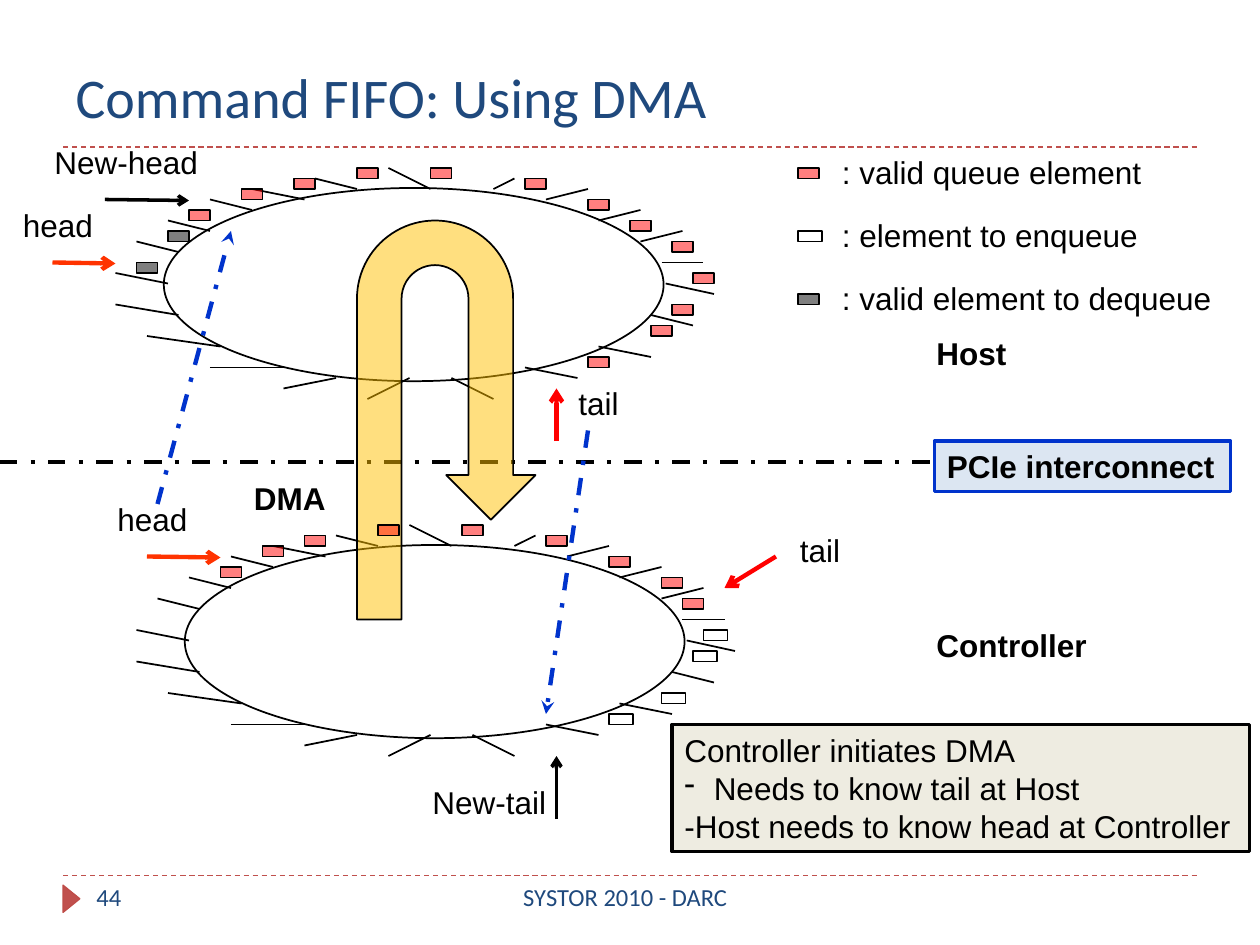
"""Build the slide on a command FIFO that is moved by DMA."""
from lxml import etree
from pptx import Presentation
from pptx.dml.color import RGBColor
from pptx.enum.dml import MSO_LINE
from pptx.enum.shapes import MSO_CONNECTOR, MSO_SHAPE
from pptx.enum.text import MSO_ANCHOR, PP_ALIGN
from pptx.oxml.ns import qn
from pptx.util import Pt

PX = 7620
STRAIGHT = MSO_CONNECTOR.STRAIGHT
RECTANGLE, OVAL = MSO_SHAPE.RECTANGLE, MSO_SHAPE.OVAL
TRIANGLE, U_TURN = MSO_SHAPE.ISOSCELES_TRIANGLE, MSO_SHAPE.U_TURN_ARROW
DASH, DASH_DOT = MSO_LINE.DASH, MSO_LINE.DASH_DOT
LEFT, CENTER = PP_ALIGN.LEFT, PP_ALIGN.CENTER
TOP, MIDDLE, BOTTOM = MSO_ANCHOR.TOP, MSO_ANCHOR.MIDDLE, MSO_ANCHOR.BOTTOM
color = RGBColor.from_string
BLACK, WHITE, RED, ORANGE = "000000", "FFFFFF", "FF0000", "FF3300"
BLUE, NAVY, BRICK = "0033CC", "1F497D", "C0504D"

presentation = Presentation()
presentation.slide_width, presentation.slide_height = 1200 * PX, 900 * PX
slide = presentation.slides.add_slide(presentation.slide_layouts[5])


def draw_line(ends, hue, width, dash=None, head=None):
    connector = slide.shapes.add_connector(STRAIGHT, *[value * PX for value in ends])
    connector.line.color.rgb = color(hue)
    connector.line.width = Pt(width)
    if dash:
        connector.line.dash_style = dash
    if head:
        etree.SubElement(connector.line._get_or_add_ln(), qn("a:tailEnd"), type=head)
    etree.SubElement(connector._element.spPr, qn("a:effectLst"))


def draw_shape(kind, frame, fill=None, alpha=100, outline=BLACK, width=1):
    shape = slide.shapes.add_shape(kind, *[value * PX for value in frame])
    shape.shadow.inherit = False
    if fill:
        shape.fill.solid()
        shape.fill.fore_color.rgb = color(fill)
        if alpha < 100:
            hue = shape._element.spPr.find(".//" + qn("a:srgbClr"))
            etree.SubElement(hue, qn("a:alpha"), val=str(alpha * 1000))
    else:
        shape.fill.background()
    shape.line.color.rgb = color(outline)
    shape.line.width = Pt(width)
    return shape


for y in (834, 140):
    draw_line((60, y, 1140, y), BRICK, 0.75, DASH)
footer_marker = draw_shape(TRIANGLE, (55, 848, 26, 16), BRICK, outline="BF4C48", width=0.75)
footer_marker.rotation = 90

title = slide.shapes.title
title.left, title.top, title.width, title.height = 60 * PX, 30 * PX, 1080 * PX, 100 * PX
title.text_frame.vertical_anchor = BOTTOM
paragraph = title.text_frame.paragraphs[0]
paragraph.alignment = LEFT
run = paragraph.add_run()
run.text = "Command FIFO: Using DMA"
run.font.name, run.font.size = "Calibri", Pt(32)
run.font.color.rgb = color(NAVY)

slot_marks = [
    (160, 210, 200, 220), (130, 230, 170, 240), (110, 260, 160, 270), (110, 290, 170, 300),
    (140, 320, 210, 330), (200, 350, 270, 350), (200, 190, 240, 200), (240, 180, 290, 190),
    (270, 370, 320, 360), (390, 360, 350, 380), (300, 170, 340, 180), (430, 360, 470, 380),
    (500, 350, 550, 360), (370, 160, 410, 180), (470, 180, 490, 170), (520, 190, 560, 180),
    (570, 210, 610, 200), (610, 230, 650, 220), (630, 250, 670, 250), (634, 270, 680, 280),
    (570, 330, 620, 340), (620, 300, 660, 310),
]
for dx, dy in ((0, 0), (20, 340)):
    draw_shape(OVAL, (156 + dx, 179 + dy, 476, 184))
    for x1, y1, x2, y2 in slot_marks:
        draw_line((x1 + dx, y1 + dy, x2 + dx, y2 + dy), BLACK, 1)

draw_line((0, 440, 1170, 440), BLACK, 2.5, DASH_DOT)
dma_arrow = draw_shape(U_TURN, (340, 210, 170, 380), "FFC000", 50)
for index, value in enumerate((0.25, 0.25, 0.25, 0.44, 0.75)):
    dma_arrow.adjustments[index] = value

valid_elements = [
    (180, 200), (230, 180), (280, 170), (340, 160), (410, 160), (500, 170), (560, 190),
    (600, 210), (640, 230), (660, 260), (640, 290), (620, 310), (560, 340), (210, 540),
    (250, 520), (290, 510), (360, 500), (440, 500), (630, 550), (580, 530), (520, 510),
    (650, 570), (760, 160),
]
dequeue_elements = [(160, 220), (130, 250), (760, 280)]
enqueue_elements = [(670, 600), (660, 620), (630, 660), (580, 680), (760, 220)]
for elements, width, fill, alpha in (
    (valid_elements, 20, RED, 50),
    (dequeue_elements, 20, BLACK, 50),
    (enqueue_elements, 23, WHITE, 100),
):
    for x, y in elements:
        draw_shape(RECTANGLE, (x, y, width, 10), fill, alpha)

for ends, hue, width in (
    ((50, 250, 110, 251), ORANGE, 2.5),
    ((530, 420, 530, 370), RED, 2.5),
    ((140, 530, 210, 531), ORANGE, 2.5),
    ((739, 530, 690, 560), RED, 2.5),
    ((100, 190, 180, 191), BLACK, 2),
    ((530, 780, 530, 720), BLACK, 2),
):
    draw_line(ends, hue, width, head="arrow")
for ends in ((150, 480, 220, 220), (560, 410, 520, 680)):
    draw_line(ends, BLUE, 2.5, DASH_DOT, "stealth")

for text, x, y, width, bold in (
    ("head", 10, 190, 91, False),
    ("tail", 539, 360, 62, False),
    ("Host", 880, 312, 91, True),
    ("Controller", 880, 590, 169, True),
    ("head", 100, 470, 91, False),
    ("DMA", 230, 450, 94, True),
    ("tail", 750, 500, 62, False),
    (": valid queue element", 790, 140, 312, False),
    (": element to enqueue", 790, 200, 306, False),
    (": valid element to dequeue", 790, 260, 379, False),
    ("New-tail", 400, 740, 133, False),
    ("New-head", 40, 130, 162, False),
):
    label = slide.shapes.add_textbox(x * PX, y * PX, width * PX, 48 * PX)
    label.text_frame.word_wrap = False
    run = label.text_frame.paragraphs[0].add_run()
    run.text = text
    run.font.name, run.font.size, run.font.bold = "Arial", Pt(18), bold
    run.font.color.rgb = color(BLACK)

note_lines = ["Controller initiates DMA", "Needs to know tail at Host",
              "-Host needs to know head at Controller"]
for frame, fill, outline, lines, bold in (
    ((640, 690, 550, 121), "EEECE1", BLACK, note_lines, False),
    ((890, 420, 282, 48), "DCE6F2", BLUE, ["PCIe interconnect"], True),
):
    box = draw_shape(RECTANGLE, frame, fill, outline=outline, width=2)
    text_frame = box.text_frame
    text_frame.word_wrap = False
    text_frame.vertical_anchor = MIDDLE
    for index, text in enumerate(lines):
        paragraph = text_frame.add_paragraph() if index else text_frame.paragraphs[0]
        paragraph.alignment = LEFT
        if index == 1:
            properties = paragraph._p.get_or_add_pPr()
            properties.set("marL", str(28 * PX))
            properties.set("indent", str(-28 * PX))
            etree.SubElement(properties, qn("a:buChar"), char="-")
        run = paragraph.add_run()
        run.text = text
        run.font.name, run.font.size, run.font.bold = "Arial", Pt(18), bold
        run.font.color.rgb = color(BLACK)

for text, x, width, alignment in (
    ("44", 80, 260, LEFT),
    ("SYSTOR 2010 - DARC", 350, 491, CENTER),
):
    footer = slide.shapes.add_textbox(x * PX, 834 * PX, width * PX, 48 * PX)
    footer.text_frame.word_wrap = True
    footer.text_frame.vertical_anchor = TOP
    paragraph = footer.text_frame.paragraphs[0]
    paragraph.alignment = alignment
    run = paragraph.add_run()
    run.text = text
    run.font.name, run.font.size = "Calibri", Pt(14)
    run.font.color.rgb = color(NAVY)

presentation.save("out.pptx")
